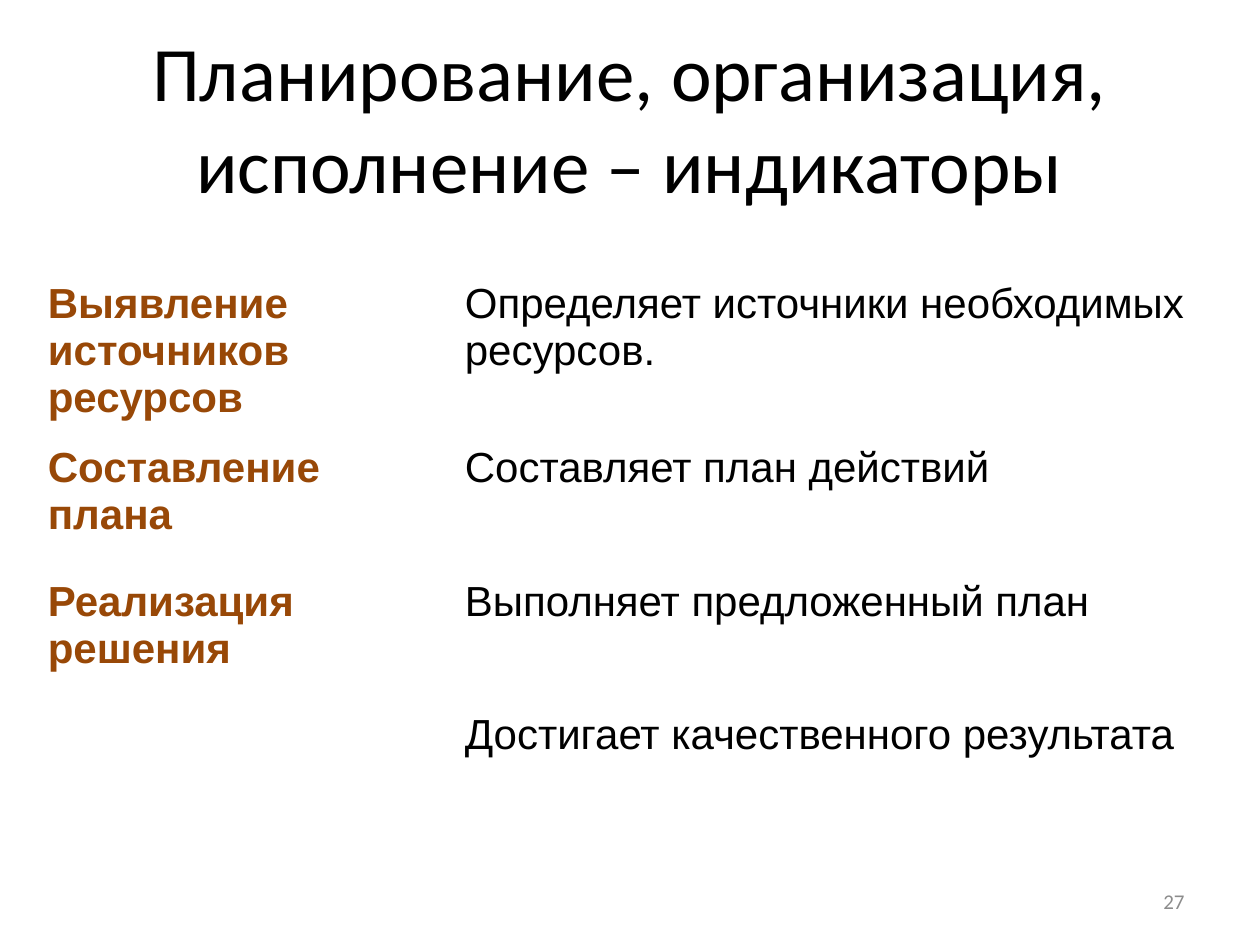
"""Build a slide listing indicators for planning, organisation and execution."""
import pptx
import pptx.dml.color
import pptx.enum.text
import pptx.util
from pptx.dml.color import RGBColor
from pptx.enum.text import MSO_ANCHOR, PP_ALIGN
from pptx.util import Inches

BLACK = RGBColor(0x00, 0x00, 0x00)
GREY = RGBColor(0x8C, 0x8C, 0x8C)
BROWN = RGBColor(0x98, 0x48, 0x07)

HEADING = "Планирование, организация, исполнение – индикаторы"
PAGE_NUMBER = "27"
INDICATORS = [
    ("Выявление источников ресурсов", "Определяет источники необходимых ресурсов."),
    ("Составление плана", "Составляет план действий"),
    ("Реализация решения", "Выполняет предложенный план"),
    ("", "Достигает качественного результата"),
]
COLUMN_WIDTHS = (3.31, 5.92)
ROW_HEIGHTS = (1.23, 1.06, 1.06, 1.06)
COLUMN_STYLES = ((BROWN, True), (BLACK, False))


def write(frame, text, size, face, color, bold=False, align=PP_ALIGN.LEFT):
    paragraph = frame.paragraphs[0]
    paragraph.text = text
    paragraph.alignment = align
    paragraph.font.size = pptx.util.Pt(size)
    paragraph.font.name = face
    paragraph.font.color.rgb = color
    paragraph.font.bold = bold


def add_label(slide, box, text, size, color, align):
    frame = slide.shapes.add_textbox(*map(Inches, box)).text_frame
    frame.word_wrap = True
    frame.vertical_anchor = MSO_ANCHOR.MIDDLE
    write(frame, text, size, "Calibri", color, align=align)


def add_indicators(slide):
    table = slide.shapes.add_table(
        len(INDICATORS), len(COLUMN_WIDTHS), Inches(0.28), Inches(2.18),
        Inches(sum(COLUMN_WIDTHS)), Inches(sum(ROW_HEIGHTS))).table
    table.first_row = False
    table.horz_banding = False
    for column, width in zip(table.columns, COLUMN_WIDTHS):
        column.width = Inches(width)
    for row, height, texts in zip(table.rows, ROW_HEIGHTS, INDICATORS):
        row.height = Inches(height)
        for cell, text, (color, bold) in zip(row.cells, texts, COLUMN_STYLES):
            cell.fill.background()
            write(cell.text_frame, text, 24, "Arial", color, bold)


def main():
    presentation = pptx.Presentation()
    presentation.slide_width = Inches(10)
    presentation.slide_height = Inches(7.5)
    slide = presentation.slides.add_slide(presentation.slide_layouts[6])
    add_label(slide, (0.5, 0.3, 9, 1.25), HEADING, 44, BLACK, PP_ALIGN.CENTER)
    add_label(slide, (7.17, 6.95, 2.33, 0.4), PAGE_NUMBER, 12, GREY, PP_ALIGN.RIGHT)
    add_indicators(slide)
    presentation.save("out.pptx")


if __name__ == "__main__":
    main()
